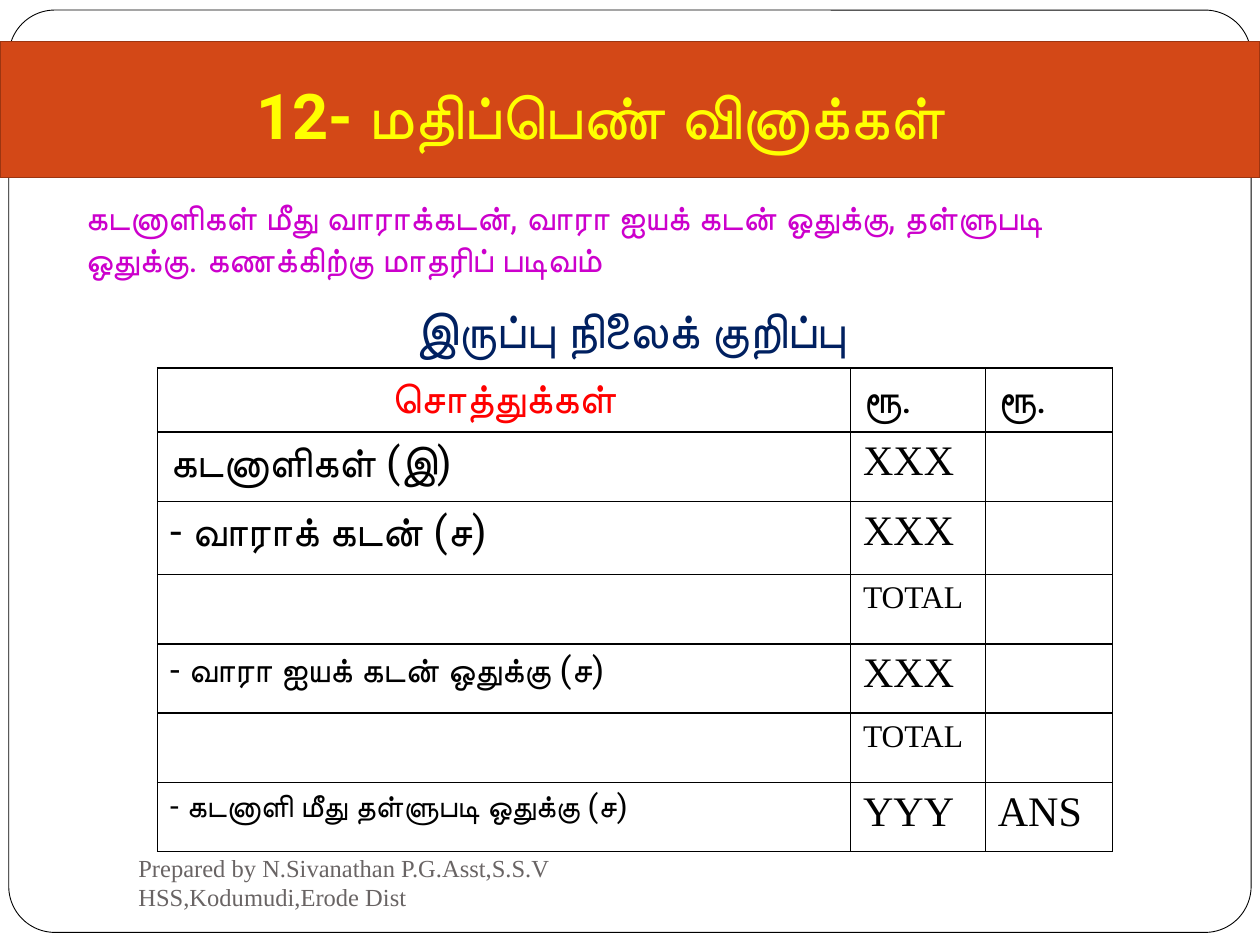
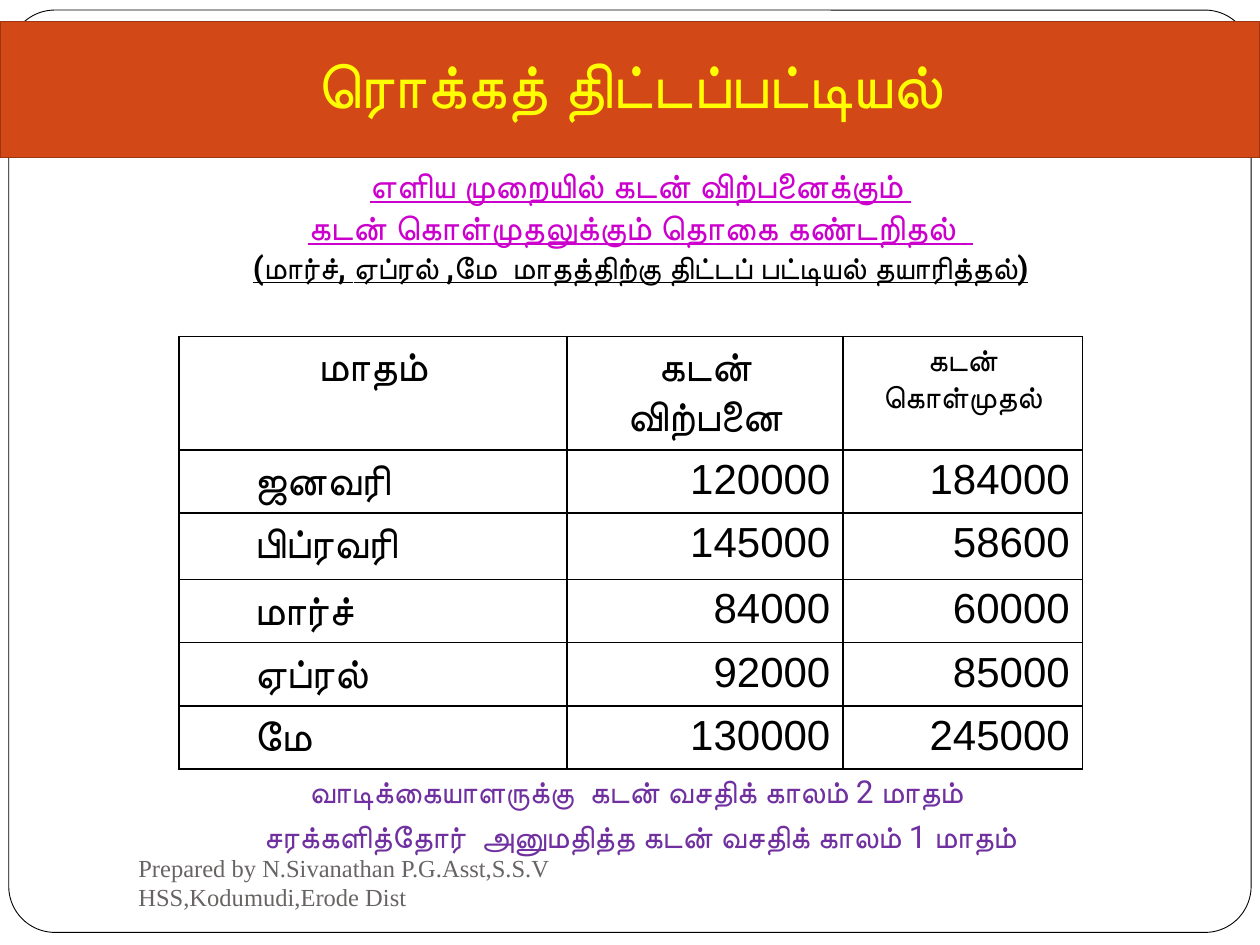
from lxml.etree import SubElement
from pptx import Presentation
from pptx.dml.color import RGBColor
from pptx.enum.shapes import MSO_SHAPE
from pptx.enum.text import MSO_ANCHOR, MSO_AUTO_SIZE, PP_ALIGN
from pptx.oxml import parse_xml
from pptx.oxml.ns import nsdecls, qn
from pptx.util import Inches, Pt

COLORS = {
    "white": "FFFFFF", "black": "000000", "band": "D34817", "band_line": "9C3511",
    "title": "FFFF00", "intro": "CC00CC", "heading": "002060", "assets": "FF0000",
    "terms": "7030A0", "footer": "696464",
}
TAMIL, SERIF, SANS = "Roboto", "Times New Roman", "Arial"
LEFT, CENTER, RIGHT = PP_ALIGN.LEFT, PP_ALIGN.CENTER, PP_ALIGN.RIGHT
FOOTER = "Prepared by N.Sivanathan P.G.Asst,S.S.V HSS,Kodumudi,Erode Dist"


def rgb(name):
    return RGBColor.from_string(COLORS[name])


def write(p, text, size=18, font=TAMIL, color="black", bold=False, underline=False,
          align=LEFT, margin=0, indent=0, before=0):
    """Put one formatted run into paragraph p."""
    p.alignment, p.space_before = align, Pt(before)
    pPr = p._p.get_or_add_pPr()
    pPr.set("marL", str(Inches(margin)))
    pPr.set("indent", str(Inches(indent)))
    r = p.add_run()
    r.text = text
    r.font.size, r.font.name = Pt(size), font
    r.font.bold, r.font.underline = bold, underline
    r.font.color.rgb = rgb(color)
    # Tamil is set in the complex-script font
    SubElement(r.font._element, qn("a:cs")).set("typeface", font)


def set_borders(cell):
    tcPr = cell._tc.get_or_add_tcPr()
    for i, side in enumerate(("lnL", "lnR", "lnT", "lnB")):
        tcPr.insert(i, parse_xml(
            f'<a:{side} {nsdecls("a")} w="{Pt(1)}"><a:solidFill>'
            f'<a:srgbClr val="{COLORS["black"]}"/></a:solidFill></a:{side}>'))


class Deck:
    def __init__(self):
        self.prs = Presentation()
        self.prs.slide_width, self.prs.slide_height = Inches(10), Inches(7.5)
        self.s = None

    def slide(self, title, band_top, title_left, title_top):
        self.s = self.prs.slides.add_slide(self.prs.slide_layouts[5])
        frame = self.shape(MSO_SHAPE.ROUNDED_RECTANGLE, 0.07, 0.08, 9.86, 7.32,
                           "white", "black", 0.5)
        frame.adjustments[0] = 0.05
        self.shape(MSO_SHAPE.RECTANGLE, 0, band_top, 10, 1.08, "band", "band_line", 1)
        self.title(title, title_left, title_top)
        self.text([FOOTER], 1, 6.75, 4.33, 0.5, anchor=MSO_ANCHOR.MIDDLE,
                  size=14, font=SERIF, color="footer")

    def title(self, text, left, top):
        sp = self.s.shapes.title
        sp.left, sp.top, sp.width, sp.height = map(Inches, (left, top, 9, 0.73))
        tf = sp.text_frame
        tf.auto_size, tf.vertical_anchor = MSO_AUTO_SIZE.NONE, MSO_ANCHOR.BOTTOM
        tf.margin_bottom = Inches(0.1)
        write(tf.paragraphs[0], text, size=36, color="title", bold=True, align=CENTER)
        # Bring the title in front of the band
        sp.element.getparent().append(sp.element)

    def shape(self, kind, left, top, width, height, fill, line, weight):
        sp = self.s.shapes.add_shape(kind, *map(Inches, (left, top, width, height)))
        sp.shadow.inherit = False
        sp.fill.solid()
        sp.fill.fore_color.rgb = rgb(fill)
        sp.line.color.rgb = rgb(line)
        sp.line.width = Pt(weight)
        return sp

    def text(self, lines, left, top, width, height, anchor=MSO_ANCHOR.TOP, **fmt):
        """Add a text box; a line is a string or (string, own format)."""
        box = self.s.shapes.add_textbox(*map(Inches, (left, top, width, height)))
        tf = box.text_frame
        tf.word_wrap, tf.vertical_anchor = True, anchor
        for i, line in enumerate(lines):
            text, own = (line, {}) if isinstance(line, str) else line
            p = tf.add_paragraph() if i else tf.paragraphs[0]
            write(p, text, **{**fmt, **own})

    def table(self, rows, left, top, widths, heights):
        """Add a table; a cell is None or (string, format)."""
        table = self.s.shapes.add_table(
            len(rows), len(widths), Inches(left), Inches(top),
            Inches(sum(widths)), Inches(sum(heights))).table
        table.first_row = table.horz_banding = False
        for column, width in zip(table.columns, widths):
            column.width = Inches(width)
        for row, height, content in zip(table.rows, heights, rows):
            row.height = Inches(height)
            for cell, item in zip(row.cells, content):
                cell.fill.background()
                set_borders(cell)
                if item:
                    write(cell.text_frame.paragraphs[0], item[0], **item[1])


def balance_sheet(deck):
    deck.slide("12- மதிப்பெண் வினாக்கள் ", 0.33, 0.33, 0.58)
    deck.text(["கடனாளிகள் மீது வாராக்கடன், வாரா ஐயக் கடன் ஒதுக்கு, தள்ளுபடி ஒதுக்கு. "
               "கணக்கிற்கு மாதரிப் படிவம்"], 0.58, 1.5, 8.67, 0.77,
              size=20, color="intro")
    deck.text(["இருப்பு நிலைக் குறிப்பு"], 0.67, 2.33, 8.67, 0.57,
              size=28, color="heading", bold=True, align=CENTER)
    large = {"size": 24}
    amount = {"size": 24, "font": SERIF}
    rupees = ("ரூ.", large)
    xxx = ("XXX", amount)
    total = [None, ("TOTAL", {"font": SERIF}), None]
    deck.table([
        [("சொத்துக்கள்", {"size": 24, "color": "assets", "bold": True, "align": CENTER}),
         rupees, rupees],
        [("கடனாளிகள் (இ)", large), xxx, None],
        [("- வாராக் கடன் (ச)", large), xxx, None],
        total,
        [("- வாரா ஐயக் கடன் ஒதுக்கு (ச)", {"size": 20}), xxx, None],
        total,
        [("- கடனாளி மீது தள்ளுபடி ஒதுக்கு (ச)", {"size": 18}),
         ("YYY", amount), ("ANS", amount)],
    ], 1.25, 2.92, [5.5, 1.07, 1.01], [0.51, 0.55, 0.58] + [0.55] * 4)


def cash_budget(deck):
    deck.slide("ரொக்கத் திட்டப்பட்டியல்", 0.17, 0.5, 0.33)
    deck.text(["எளிய முறையில் கடன் விற்பனைக்கும் ",
               "கடன் கொள்முதலுக்கும் தொகை கண்டறிதல்  ",
               ("(மார்ச், ஏப்ரல் ,மே  மாதத்திற்கு திட்டப் பட்டியல் தயாரித்தல்)",
                {"size": 18, "color": "black"})],
              0.5, 1.25, 9.17, 1.17,
              size=20, color="intro", bold=True, underline=True, align=CENTER)
    header = {"size": 24, "align": CENTER}
    month_style = {"size": 24, "margin": 0.5}
    amount = {"size": 24, "font": SANS, "align": RIGHT}
    months = [("ஜனவரி", 120000, 184000), ("பிப்ரவரி", 145000, 58600),
              ("மார்ச்", 84000, 60000), ("ஏப்ரல்", 92000, 85000),
              ("மே", 130000, 245000)]
    rows = [[("மாதம்", header), ("கடன் விற்பனை", header),
             ("கடன் கொள்முதல்", {"size": 18, "align": CENTER})]]
    rows += [[(month, month_style), (str(sales), amount), (str(purchases), amount)]
             for month, sales, purchases in months]
    deck.table(rows, 1.42, 2.67, [3.08, 2.19, 1.9], [0.64, 0.5, 0.53, 0.5, 0.5, 0.5])
    deck.text(["வாடிக்கையாளருக்கு  கடன் வசதிக் காலம் 2 மாதம் ",
               "சரக்களித்தோர்  அனுமதித்த கடன் வசதிக் காலம் 1 மாதம்"],
              0.58, 6.08, 9, 1.17, color="terms", align=CENTER,
              margin=0.44, indent=-0.5, before=4)


def main():
    deck = Deck()
    balance_sheet(deck)
    cash_budget(deck)
    deck.prs.save("out.pptx")


if __name__ == "__main__":
    main()
